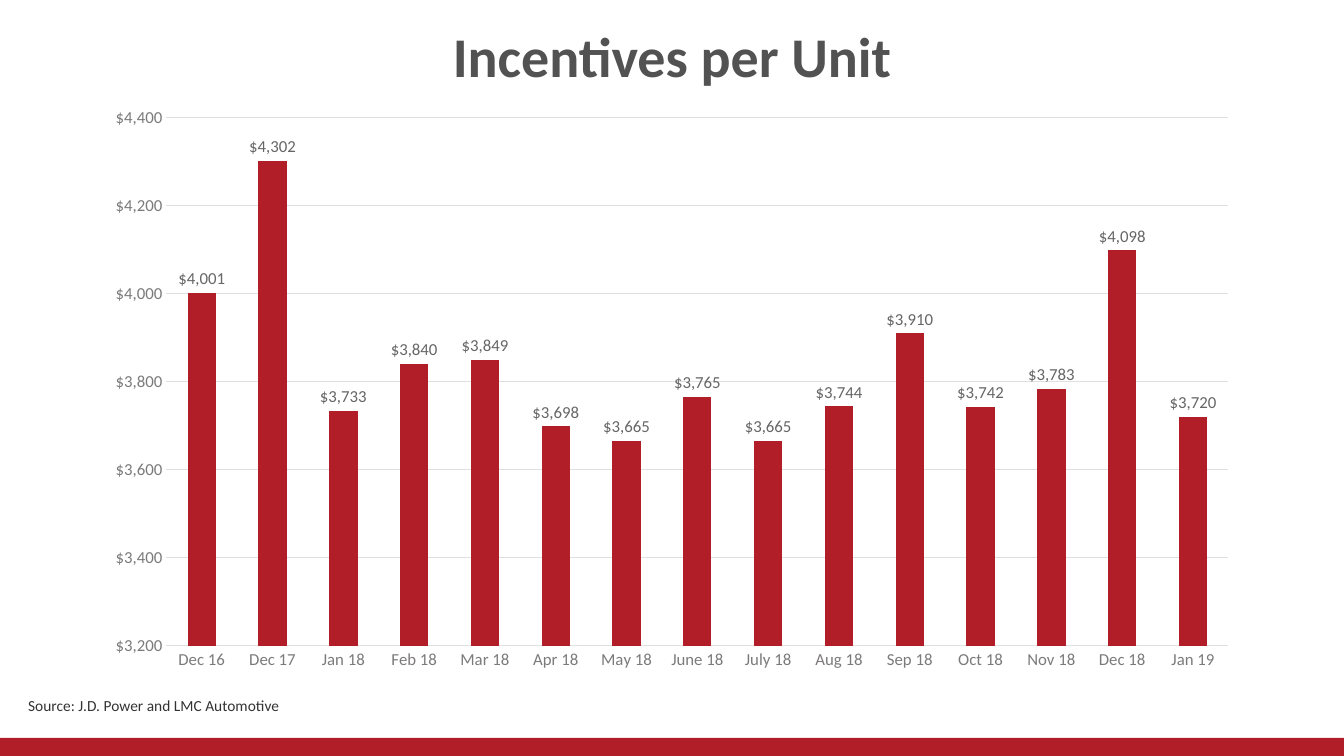
from dataclasses import dataclass

from pptx import Presentation
from pptx import util as u
from pptx.chart.data import CategoryChartData
from pptx.dml.color import RGBColor
from pptx.enum import chart as charts, shapes, text


@dataclass(frozen=True)
class Theme:
    font: str = "Calibri"
    red: str = "B21E28"
    heading: str = "525252"
    body: str = "343333"
    axis: str = "7C7A7A"
    label: str = "676565"
    grid: str = "E1E0E0"
    title_size: int = 40
    chart_size: int = 12
    source_size: int = 11
    hairline: float = 0.75
    currency: str = '"$"#,##0'


class SlideBuilder:
    COLUMNS, ROWS = 80, 45

    def __init__(self, deck, theme):
        self.theme = theme
        self.column = deck.slide_width / self.COLUMNS
        self.row = deck.slide_height / self.ROWS
        self.slide = deck.slides.add_slide(deck.slide_layouts[5])

    def area(self, left, top, width, height):
        return (round(left * self.column), round(top * self.row),
                round(width * self.column), round(height * self.row))

    def style(self, font, size, color, bold=False):
        font.name = self.theme.font
        font.size = u.Pt(size)
        font.bold = bold
        font.color.rgb = RGBColor.from_string(color)

    def hairline(self, line):
        line.color.rgb = RGBColor.from_string(self.theme.grid)
        line.width = u.Pt(self.theme.hairline)

    def label(self, box, words, size, color, align, anchor, bold=False):
        frame = box.text_frame
        frame.word_wrap = True
        frame.auto_size = text.MSO_AUTO_SIZE.NONE
        frame.vertical_anchor = anchor
        para = frame.paragraphs[0]
        para.alignment = align
        span = para.add_run()
        span.text = words
        self.style(span.font, size, color, bold)

    def title(self, words, *place):
        box = self.slide.shapes.title
        box.left, box.top, box.width, box.height = self.area(*place)
        self.label(box, words, self.theme.title_size, self.theme.heading,
                   text.PP_ALIGN.CENTER, text.MSO_ANCHOR.MIDDLE, bold=True)

    def source(self, words, *place):
        box = self.slide.shapes.add_textbox(*self.area(*place))
        self.label(box, words, self.theme.source_size, self.theme.body,
                   text.PP_ALIGN.LEFT, text.MSO_ANCHOR.TOP)

    def band(self, *place):
        band = self.slide.shapes.add_shape(
            shapes.MSO_SHAPE.RECTANGLE, *self.area(*place))
        band.shadow.inherit = False
        band.fill.solid()
        band.fill.fore_color.rgb = RGBColor.from_string(self.theme.red)
        band.line.fill.background()

    def columns(self, name, values, low, high, step, *place):
        theme = self.theme
        data = CategoryChartData(number_format=theme.currency)
        data.categories = list(values)
        data.add_series(name, list(values.values()))
        chart = self.slide.shapes.add_chart(
            charts.XL_CHART_TYPE.COLUMN_CLUSTERED,
            *self.area(*place), data).chart
        chart.has_legend = False
        chart.has_title = False
        self.style(chart.font, theme.chart_size, theme.body)

        for axis in (chart.category_axis, chart.value_axis):
            axis.major_tick_mark = charts.XL_TICK_MARK.NONE
            axis.minor_tick_mark = charts.XL_TICK_MARK.NONE
            self.style(axis.tick_labels.font, theme.chart_size, theme.axis)
        self.hairline(chart.category_axis.format.line)

        scale = chart.value_axis
        scale.minimum_scale, scale.maximum_scale = low, high
        scale.major_unit = step
        scale.format.line.fill.background()
        scale.has_major_gridlines = True
        self.hairline(scale.major_gridlines.format.line)
        scale.tick_labels.number_format = theme.currency
        scale.tick_labels.number_format_is_linked = False

        plot = chart.plots[0]
        plot.vary_by_categories = False
        plot.gap_width = 150
        plot.overlap = -27
        fill = plot.series[0].format.fill
        fill.solid()
        fill.fore_color.rgb = RGBColor.from_string(theme.red)

        labels = plot.series[0].data_labels
        labels.show_value = True
        labels.position = charts.XL_LABEL_POSITION.OUTSIDE_END
        labels.number_format = theme.currency
        labels.number_format_is_linked = False
        self.style(labels.font, theme.chart_size, theme.label)


INCENTIVES = {
    "Dec 16": 4001, "Dec 17": 4302, "Jan 18": 3733, "Feb 18": 3840,
    "Mar 18": 3849, "Apr 18": 3698, "May 18": 3665, "June 18": 3765,
    "July 18": 3665, "Aug 18": 3744, "Sep 18": 3910, "Oct 18": 3742,
    "Nov 18": 3783, "Dec 18": 4098, "Jan 19": 3720,
}


def main():
    deck = Presentation()
    deck.slide_width = u.Inches(13.33)
    deck.slide_height = u.Inches(7.5)
    page = SlideBuilder(deck, Theme())
    page.band(0, 43.92, 80, 1.08)
    page.title("Incentives per Unit", 4, 0.9, 72, 4.8)
    page.columns("Series 1", INCENTIVES, 3200, 4400, 200,
                 5.5, 5.7, 69, 34.86)
    page.source("Source: J.D. Power and LMC Automotive",
                1.08, 41.16, 20.1, 1.74)
    deck.save("out.pptx")


if __name__ == "__main__":
    main()
